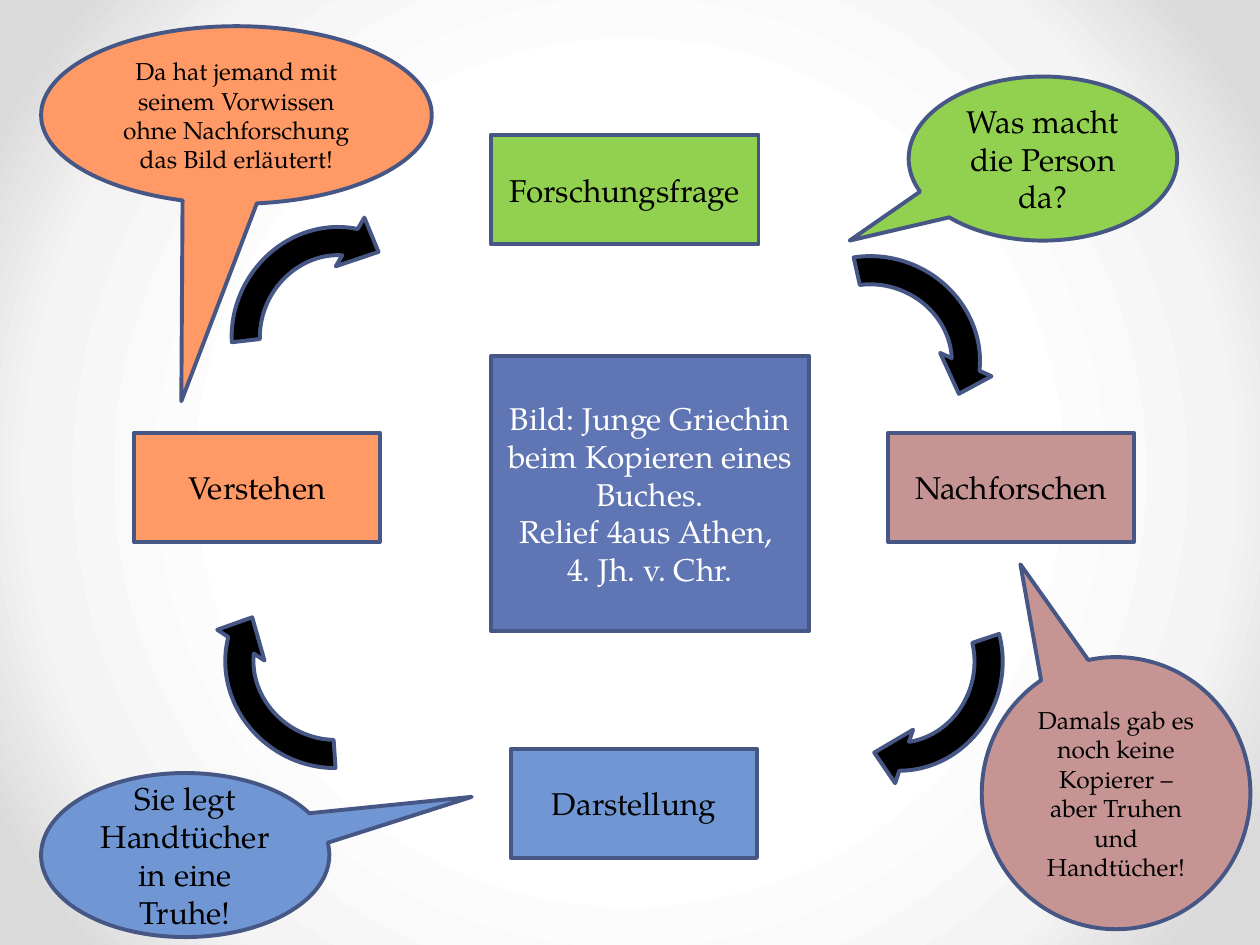
from pptx import Presentation
from pptx.dml.color import RGBColor
from pptx.enum.shapes import MSO_SHAPE
from pptx.enum.text import MSO_ANCHOR, PP_ALIGN
from pptx.oxml import parse_xml
from pptx.oxml.ns import nsdecls
from pptx.util import Pt

FONT = "TeX Gyre Pagella"
BLACK = RGBColor(0x00, 0x00, 0x00)
WHITE = RGBColor(0xFF, 0xFF, 0xFF)
OUTLINE = RGBColor(0x47, 0x57, 0x85)
GREEN = RGBColor(0x92, 0xD0, 0x50)
ROSE = RGBColor(0xC7, 0x94, 0x94)
BLUE = RGBColor(0x70, 0x97, 0xD3)
ORANGE = RGBColor(0xFF, 0x99, 0x66)
INDIGO = RGBColor(0x60, 0x76, 0xB4)

# Content: text, fill, (left, top, width, height)
STEP_W, STEP_H = 140.5, 62.5
STEPS = [
    ("Forschungsfrage", GREEN, (280.5, 77, 153, STEP_H)),
    ("Nachforschen", ROSE, (507.5, 247.25, STEP_W, STEP_H)),
    ("Darstellung", BLUE, (292, 427.75, STEP_W, STEP_H)),
    ("Verstehen", ORANGE, (76.5, 247.25, STEP_W, STEP_H)),
]
# Content: text, fill, box, text size, pointer tip relative to the centre
CALLOUTS = [
    ("Damals gab es noch keine Kopierer – aber Truhen und Handtücher!",
     ROSE, (561, 375.5, 153.5, 155.5), 14, (-0.356, -0.841)),
    ("Was macht die Person da?",
     GREEN, (519.25, 43.75, 153.5, 93.75), 18, (-0.72, 0.5)),
    ("Sie legt Handtücher in eine Truhe!",
     BLUE, (23.5, 441.75, 164.75, 93.75), 18, (0.994, -0.355)),
    ("Da hat jemand mit seinem Vorwissen ohne Nachforschung das Bild erläutert!",
     ORANGE, (23.5, 15, 223.25, 101.5), 14, (-0.141, 1.611)),
]
PICTURE_NOTE = ("Bild: Junge Griechin beim Kopieren eines Buches.\n"
                "Relief 4aus Athen, \n4. Jh. v. Chr.")
PICTURE_BOX = (280.5, 203.5, 182, 157)

# Cycle arrows: left, top, rotation
ARROWS = [(119.5, 316.75, 213.1), (447.75, 316, 108.5),
          (121.5, 124.5, 300.4), (432, 139, 24.4)]
ARROW_W, ARROW_H = 136.75, 129
ARROW_ADJ = (0.125, 11.42, 204.58, 139.85, 0.125)

# Background: position in percent, colour
BACKDROP = [(50, "FFFFFF"), (76, "F4F4F4"), (92, "DADADA")]


def set_background(s):
    stops = "".join(f'<a:gs pos="{pos * 1000}"><a:srgbClr val="{color}"/></a:gs>'
                    for pos, color in BACKDROP)
    s.element.cSld.insert(0, parse_xml(
        f'<p:bg {nsdecls("p", "a")}><p:bgPr><a:gradFill rotWithShape="1">'
        f'<a:gsLst>{stops}</a:gsLst><a:path path="circle">'
        '<a:fillToRect l="50000" t="50000" r="50000" b="50000"/></a:path>'
        '</a:gradFill><a:effectLst/></p:bgPr></p:bg>'))


def add_figure(s, kind, box, fill, adjustments=()):
    sp = s.shapes.add_shape(kind, *(Pt(v) for v in box))
    sp.shadow.inherit = False
    sp.fill.solid()
    sp.fill.fore_color.rgb = fill
    sp.line.color.rgb = OUTLINE
    sp.line.width = Pt(2.25)
    for i, value in enumerate(adjustments):
        sp.adjustments[i] = value
    return sp


def write(sp, text, size=18, color=BLACK):
    tf = sp.text_frame
    tf.word_wrap = True
    tf.vertical_anchor = MSO_ANCHOR.MIDDLE
    tf.text = text
    for p in tf.paragraphs:
        p.alignment = PP_ALIGN.CENTER
        p.font.name = FONT
        p.font.size = Pt(size)
        p.font.color.rgb = color


def main():
    prs = Presentation()
    prs.slide_width, prs.slide_height = Pt(720), Pt(540)
    s = prs.slides.add_slide(prs.slide_layouts[6])
    set_background(s)

    # Research cycle
    for text, fill, box in STEPS:
        write(add_figure(s, MSO_SHAPE.RECTANGLE, box, fill), text)
    for left, top, rotation in ARROWS:
        sp = add_figure(s, MSO_SHAPE.CIRCULAR_ARROW,
                        (left, top, ARROW_W, ARROW_H), BLACK, ARROW_ADJ)
        sp.rotation = rotation

    # Speech bubbles
    for text, fill, box, size, tip in CALLOUTS:
        write(add_figure(s, MSO_SHAPE.OVAL_CALLOUT, box, fill, tip), text, size)

    # Picture description in the middle
    write(add_figure(s, MSO_SHAPE.RECTANGLE, PICTURE_BOX, INDIGO),
          PICTURE_NOTE, color=WHITE)

    prs.save("out.pptx")


if __name__ == "__main__":
    main()
